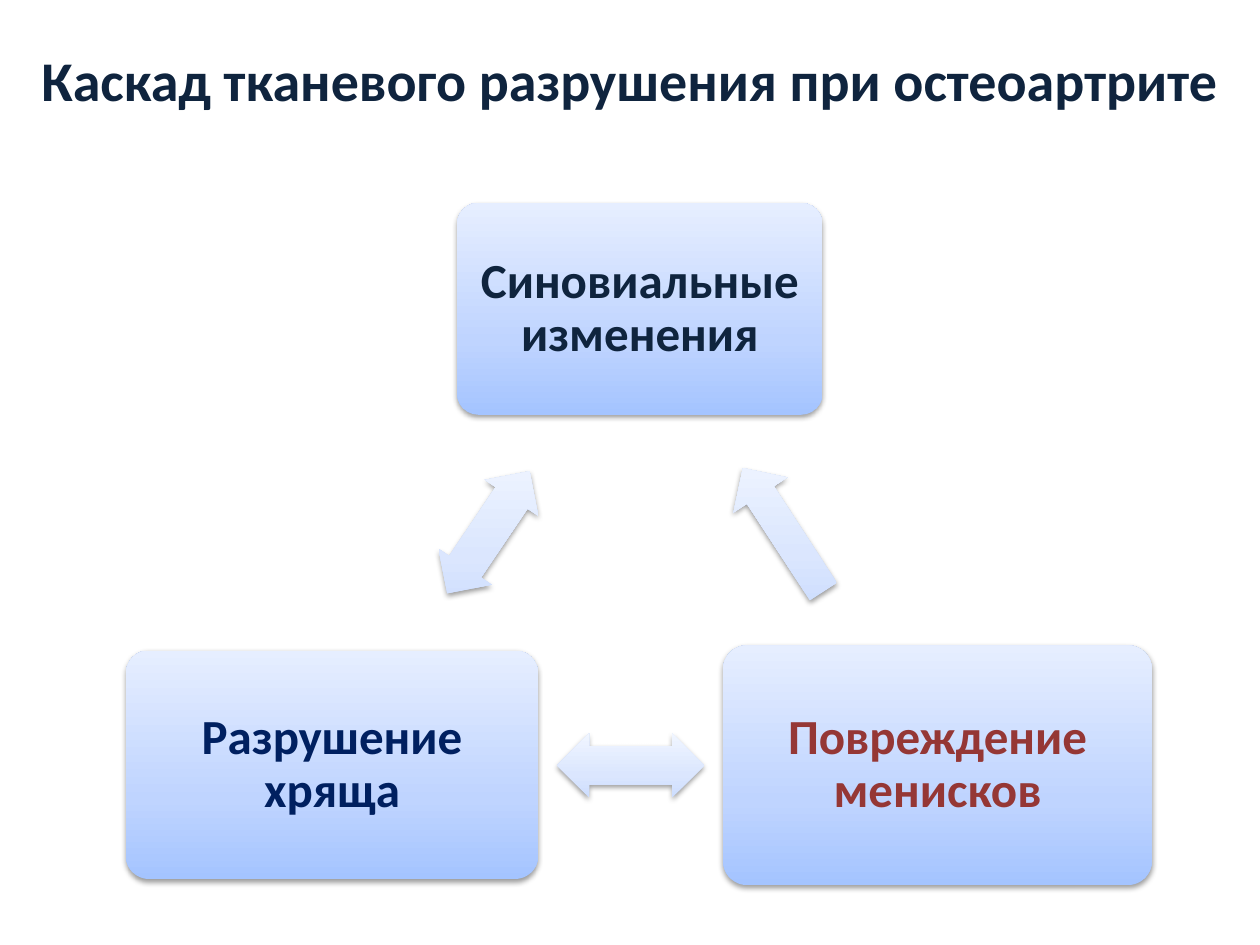
from lxml import etree
from pptx import Presentation
from pptx.dml.color import RGBColor
from pptx.enum.shapes import MSO_SHAPE
from pptx.enum.text import MSO_ANCHOR, PP_ALIGN
from pptx.oxml import parse_xml
from pptx.oxml.ns import qn
from pptx.util import Pt

ROUND = MSO_SHAPE.ROUNDED_RECTANGLE
LEFT = MSO_SHAPE.LEFT_ARROW
BOTH = MSO_SHAPE.LEFT_RIGHT_ARROW
MIDDLE = MSO_ANCHOR.MIDDLE
CENTER = PP_ALIGN.CENTER
NS = "http://schemas.openxmlformats.org/drawingml/2006/main"
BOX = ["A4C4FF", "BFD4FF", "E6EEFF"]
ARROW = ["CDDDFE", "DBE6FE", "F0F5FF"]


def write(frame, text, size, color):
    frame.word_wrap = True
    frame.vertical_anchor = MIDDLE
    para = frame.paragraphs[0]
    para.alignment = CENTER
    run = para.add_run()
    run.text = text
    run.font.name = "Calibri"
    run.font.size = Pt(size)
    run.font.bold = True
    run.font.color.rgb = RGBColor.from_string(color)
    return para


def style(shape, tones):
    shape.line.fill.background()
    shape.shadow.inherit = False
    shape.fill.gradient()
    grad = shape._element.spPr.find(qn("a:gradFill"))
    stops = "".join(
        f'<a:gs pos="{pos}"><a:srgbClr val="{tone}"/></a:gs>'
        for pos, tone in zip((0, 35000, 100000), tones))
    grad.getparent().replace(grad, parse_xml(
        f'<a:gradFill xmlns:a="{NS}" rotWithShape="0"><a:gsLst>{stops}</a:gsLst>'
        '<a:lin ang="16200000" scaled="0"/></a:gradFill>'))
    shade = etree.SubElement(
        shape._element.spPr.find(qn("a:effectLst")), qn("a:outerShdw"),
        blurRad="40000", dist="20000", dir="5400000", rotWithShape="0")
    black = etree.SubElement(shade, qn("a:srgbClr"), val="000000")
    etree.SubElement(black, qn("a:alpha"), val="38000")


deck = Presentation()
deck.slide_width, deck.slide_height = Pt(720), Pt(540)
slide = deck.slides.add_slide(deck.slide_layouts[5])

title = slide.shapes.title
title.left, title.top, title.width, title.height = Pt(0), Pt(18), Pt(720), Pt(54)
write(title.text_frame, "Каскад тканевого разрушения при остеоартрите", 32, "0F243E")

boxes = [
    ("Синовиальные изменения", "0F243E", 261.2, 116, 208.8, 121),
    ("Повреждение менисков", "953735", 413.2, 368.8, 245, 137),
    ("Разрушение хряща", "002060", 72, 371.8, 235.5, 130.5),
]
for text, color, x, y, wide, high in boxes:
    box = slide.shapes.add_shape(ROUND, Pt(x), Pt(y), Pt(wide), Pt(high))
    box.adjustments[0] = 0.1
    style(box, BOX)
    frame = box.text_frame
    frame.margin_left = frame.margin_right = Pt(8.4)
    frame.margin_top = frame.margin_bottom = Pt(8.4)
    write(frame, text, 28, color).line_spacing = 0.9

arrows = [
    (LEFT, 405.4, 284.4, 56.9),
    (BOTH, 318.2, 419, 180),
    (BOTH, 237, 285.8, 304),
]
for kind, x, y, turn in arrows:
    arrow = slide.shapes.add_shape(kind, Pt(x), Pt(y), Pt(84.2), Pt(36.7))
    arrow.rotation = turn
    if kind == BOTH:
        arrow.adjustments[0] = 0.6
    style(arrow, ARROW)

deck.save("out.pptx")
